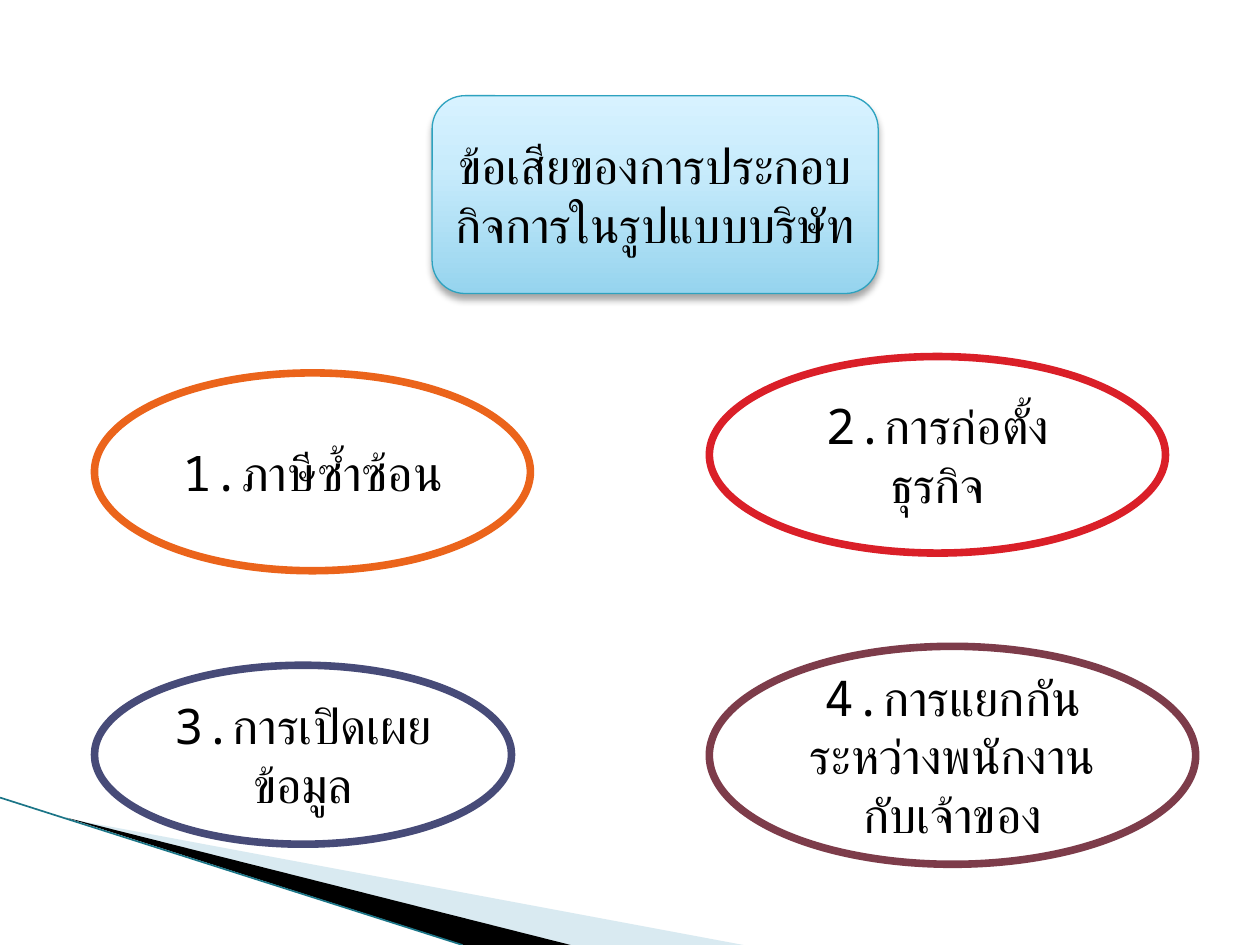
import copy

import pptx
import pptx.util
import pptx.dml.color
import pptx.enum.lang
import pptx.enum.shapes
import pptx.enum.text
import pptx.oxml
import pptx.oxml.ns
from pptx.util import Inches

FONT = "Noto Sans Mono"
COLORS = {
    "white": "FFFFFF", "black": "000000",
    "swoosh": "A0CBDC", "edge": "1B7587", "heading_line": "2DA2BF",
    "orange": "EB641B", "red": "DA1F28", "navy": "474B78", "maroon": "7D3C4A",
}
HEADING_STOPS = [(0, "96D4EE"), (0.65, "C9ECFC"), (1, "D7F2FF")]
DRAWBACKS = [
    ("1.ภาษีซ้ำซ้อน", "orange", (0.75, 2.96, 3.46, 1.57)),
    ("2.การก่อตั้งธุรกิจ", "red", (5.63, 2.83, 3.62, 1.56)),
    ("3.การเปิดเผยข้อมูล", "navy", (0.75, 5.28, 3.31, 1.42)),
    ("4.การแยกกันระหว่างพนักงานกับเจ้าของ", "maroon", (5.63, 5.13, 3.86, 1.73)),
]


def rgb(name):
    return pptx.dml.color.RGBColor.from_string(COLORS[name])


def element(tag, **attributes):
    node = pptx.oxml.parse_xml(f"<a:{tag} {pptx.oxml.ns.nsdecls('a')}/>")
    for key, value in attributes.items():
        node.set(key, str(value))
    return node


def add_wedge(page, points, color, alpha=None):
    """Draw a filled, borderless polygon; alpha is in percent."""
    start, *rest = [(Inches(x), Inches(y)) for x, y in points]
    builder = page.shapes.build_freeform(*start)
    builder.add_line_segments(rest, close=True)
    wedge = builder.convert_to_shape()
    wedge.shadow.inherit = False
    wedge.fill.solid()
    wedge.fill.fore_color.rgb = rgb(color)
    wedge.line.fill.background()
    if alpha is not None:
        fill_color = wedge.fill._xPr.find(".//" + pptx.oxml.ns.qn("a:srgbClr"))
        fill_color.append(element("alpha", val=alpha * 1000))


def add_edge(page, start, end):
    edge = page.shapes.add_connector(
        pptx.enum.shapes.MSO_CONNECTOR.STRAIGHT,
        *[Inches(value) for value in start + end])
    edge.line.color.rgb = rgb("edge")
    edge.line.width = pptx.util.Pt(0.95)
    edge._element.spPr.append(element("effectLst"))


def add_label(page, kind, place, text, line_color, line_width):
    """Add a white outlined shape with centred Thai text."""
    shape = page.shapes.add_shape(kind, *[Inches(value) for value in place])
    shape.shadow.inherit = False
    shape.fill.solid()
    shape.fill.fore_color.rgb = rgb("white")
    shape.line.color.rgb = rgb(line_color)
    shape.line.width = pptx.util.Pt(line_width)
    frame = shape.text_frame
    frame.word_wrap = True
    frame.vertical_anchor = pptx.enum.text.MSO_ANCHOR.MIDDLE
    para = frame.paragraphs[0]
    para.alignment = pptx.enum.text.PP_ALIGN.CENTER
    span = para.add_run()
    span.text = text
    span.font.name = FONT
    span.font.size = pptx.util.Pt(28)
    span.font.color.rgb = rgb("black")
    span.font.language_id = pptx.enum.lang.MSO_LANGUAGE_ID.THAI
    span._r.get_or_add_rPr().append(element("cs", typeface=FONT))
    return shape


def shade_upward(shape, stops):
    shape.fill.gradient()
    shape.fill.gradient_angle = 90
    stop_list = shape.fill._xPr.find(".//" + pptx.oxml.ns.qn("a:gsLst"))
    stop_list.insert(1, copy.deepcopy(stop_list[0]))
    for stop, (position, color) in zip(shape.fill.gradient_stops, stops):
        stop.position = position
        stop.color.rgb = pptx.dml.color.RGBColor.from_string(color)


def drop_shadow(shape):
    shadow = element("outerShdw", blurRad=pptx.util.Pt(4), dist=pptx.util.Pt(3),
                     dir=90 * 60000, rotWithShape=0)
    tint = element("srgbClr", val=COLORS["black"])
    tint.append(element("alpha", val=35000))
    shadow.append(tint)
    shape._element.spPr.find(pptx.oxml.ns.qn("a:effectLst")).append(shadow)


def main():
    deck = pptx.Presentation()
    deck.slide_width, deck.slide_height = Inches(10), Inches(7.5)
    page = deck.slides.add_slide(deck.slide_layouts.get_by_name("Blank"))

    add_wedge(page, [(0.55, 6.5), (5.9, 7.5), (4.52, 7.5)], "swoosh", 40)
    add_wedge(page, [(0.53, 6.49), (4.53, 7.5), (3.68, 7.5)], "black")
    add_edge(page, (0, 6.33), (3.67, 7.5))

    shapes = pptx.enum.shapes.MSO_SHAPE
    heading = add_label(page, shapes.ROUNDED_RECTANGLE, (3.43, 0.76, 3.54, 1.57),
                        "ข้อเสียของการประกอบกิจการในรูปแบบบริษัท",
                        "heading_line", 0.75)
    shade_upward(heading, HEADING_STOPS)
    drop_shadow(heading)

    for text, color, place in DRAWBACKS:
        add_label(page, shapes.OVAL, place, text, color, 4.33)

    deck.save("out.pptx")


if __name__ == "__main__":
    main()
